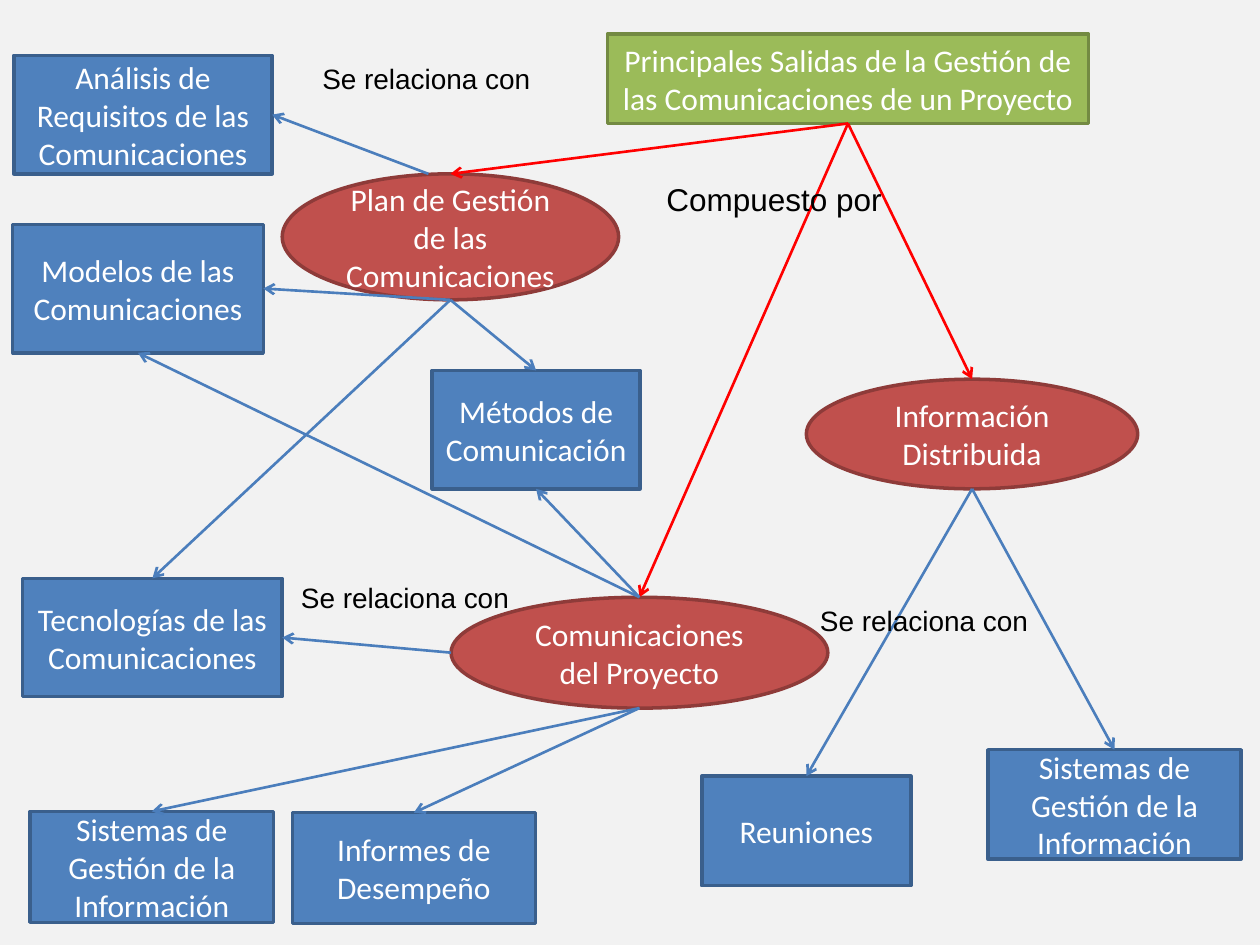
from dataclasses import dataclass
from typing import Optional

from lxml.etree import SubElement
from pptx import Presentation
from pptx.dml.color import RGBColor
from pptx.enum.shapes import MSO_CONNECTOR, MSO_SHAPE
from pptx.enum.text import MSO_ANCHOR, PP_ALIGN
from pptx.oxml.ns import qn
from pptx.util import Inches, Pt

COLORS = {
    "background": "F2F2F2", "white": "FFFFFF", "black": "000000",
    "green": "9BBB59", "green edge": "738A42",
    "red": "C0504D", "red edge": "8E3B39",
    "blue": "4F81BD", "blue edge": "3A5F8C",
    "relation": "4B7EBC", "composition": "FF0000",
}
TOP, LEFT, BOTTOM, RIGHT = range(4)


@dataclass
class Node:
    text: str
    left: float
    top: float
    width: float
    height: float
    color: str = "blue"
    form: MSO_SHAPE = MSO_SHAPE.RECTANGLE

    def side(self, site: int) -> tuple[float, float]:
        """Return the middle of one side, in inches."""
        across = {LEFT: 0, RIGHT: 1}.get(site, 0.5)
        down = {TOP: 0, BOTTOM: 1}.get(site, 0.5)
        return self.left + across * self.width, self.top + down * self.height


@dataclass
class Link:
    source: str
    source_side: int
    target: str
    target_side: int
    color: str = "relation"
    start: Optional[tuple[float, float]] = None  # used when off the middle of a side


@dataclass
class Label:
    text: str
    left: float
    top: float
    width: float
    height: float = 0.37
    size: int = 16


OVAL = {"color": "red", "form": MSO_SHAPE.OVAL}
SYSTEMS = "Sistemas de Gestión de la Información"

NODES = {
    "outputs": Node("Principales Salidas de la Gestión de las Comunicaciones de un Proyecto",
                    4.82, 0.27, 3.82, 0.71, "green"),
    "project": Node("Comunicaciones del Proyecto", 3.58, 4.74, 2.99, 0.88, **OVAL),
    "distributed": Node("Información Distribuida", 6.4, 3.01, 2.63, 0.87, **OVAL),
    "plan": Node("Plan de Gestión de las Comunicaciones", 2.24, 1.38, 2.67, 1, **OVAL),
    "analysis": Node("Análisis de Requisitos de las Comunicaciones", 0.11, 0.44, 2.05, 0.94),
    "models": Node("Modelos de las Comunicaciones", 0.1, 1.78, 1.99, 1.02),
    "methods": Node("Métodos de Comunicación", 3.43, 2.94, 1.65, 0.94),
    "technologies": Node("Tecnologías de las Comunicaciones", 0.18, 4.59, 2.06, 0.94),
    "project systems": Node(SYSTEMS, 0.24, 6.44, 1.93, 0.88),
    "reports": Node("Informes de Desempeño", 2.32, 6.45, 1.93, 0.88),
    "meetings": Node("Reuniones", 5.57, 6.16, 1.66, 0.87),
    "distributed systems": Node(SYSTEMS, 7.84, 5.95, 2.01, 0.87),
}

LINKS = [
    *(Link("outputs", BOTTOM, target, TOP, "composition")
      for target in ("project", "distributed", "plan")),
    Link("plan", TOP, "analysis", RIGHT, start=(3.4, 1.38)),
    Link("plan", BOTTOM, "models", RIGHT),
    Link("plan", BOTTOM, "methods", TOP),
    Link("plan", BOTTOM, "technologies", TOP),
    Link("project", TOP, "methods", BOTTOM),
    Link("project", TOP, "models", BOTTOM),
    Link("project", LEFT, "technologies", RIGHT),
    Link("project", BOTTOM, "project systems", TOP),
    Link("project", BOTTOM, "reports", TOP),
    Link("distributed", BOTTOM, "meetings", TOP),
    Link("distributed", BOTTOM, "distributed systems", TOP),
]

LABELS = [
    Label("Compuesto por", 5.19, 1.38, 2.52, 0.4, 18),
    Label("Se relaciona con", 6.41, 4.74, 1.94),
    Label("Se relaciona con", 2.29, 4.56, 2.52),
    Label("Se relaciona con", 2.46, 0.44, 2.44),
]


def rgb(name: str) -> RGBColor:
    return RGBColor.from_string(COLORS[name])


def write_text(frame, text: str, *, font: str, size: int, color: str,
               align=PP_ALIGN.LEFT, anchor=MSO_ANCHOR.TOP) -> None:
    frame.word_wrap = True
    frame.vertical_anchor = anchor
    para = frame.paragraphs[0]
    para.alignment = align
    span = para.add_run()
    span.text = text
    span.font.name = font
    span.font.size = Pt(size)
    span.font.color.rgb = rgb(color)


def draw_node(page, node: Node):
    shape = page.shapes.add_shape(node.form, Inches(node.left), Inches(node.top),
                                  Inches(node.width), Inches(node.height))
    shape.shadow.inherit = False
    shape.fill.solid()
    shape.fill.fore_color.rgb = rgb(node.color)
    shape.line.color.rgb = rgb(f"{node.color} edge")
    shape.line.width = Pt(2)
    write_text(shape.text_frame, node.text, font="Calibri", size=18, color="white",
               align=PP_ALIGN.CENTER, anchor=MSO_ANCHOR.MIDDLE)
    return shape


def draw_link(page, link: Link, shapes: dict) -> None:
    source, target = NODES[link.source], NODES[link.target]
    start = link.start or source.side(link.source_side)
    ends = (*start, *target.side(link.target_side))
    connector = page.shapes.add_connector(MSO_CONNECTOR.STRAIGHT, *map(Inches, ends))
    # Ovals number their sites differently: only the top one agrees with rectangles
    if link.start is None and (source.form != MSO_SHAPE.OVAL or link.source_side == TOP):
        connector.begin_connect(shapes[link.source], link.source_side)
    connector.end_connect(shapes[link.target], link.target_side)
    connector.line.color.rgb = rgb(link.color)
    connector.line.width = Pt(1.5)
    SubElement(connector.line._get_or_add_ln(), qn("a:tailEnd"), type="arrow")
    SubElement(connector._element.spPr, qn("a:effectLst"))


def draw_label(page, label: Label) -> None:
    box = page.shapes.add_textbox(Inches(label.left), Inches(label.top),
                                  Inches(label.width), Inches(label.height))
    write_text(box.text_frame, label.text, font="Arial", size=label.size, color="black")


def main() -> None:
    deck = Presentation()
    deck.slide_width, deck.slide_height = Inches(10), Inches(7.5)
    page = deck.slides.add_slide(deck.slide_layouts[6])
    page.background.fill.solid()
    page.background.fill.fore_color.rgb = rgb("background")

    # Concepts, then the arrows between them, then the arrow labels
    shapes = {key: draw_node(page, node) for key, node in NODES.items()}
    for link in LINKS:
        draw_link(page, link, shapes)
    for label in LABELS:
        draw_label(page, label)

    deck.save("out.pptx")


if __name__ == "__main__":
    main()
